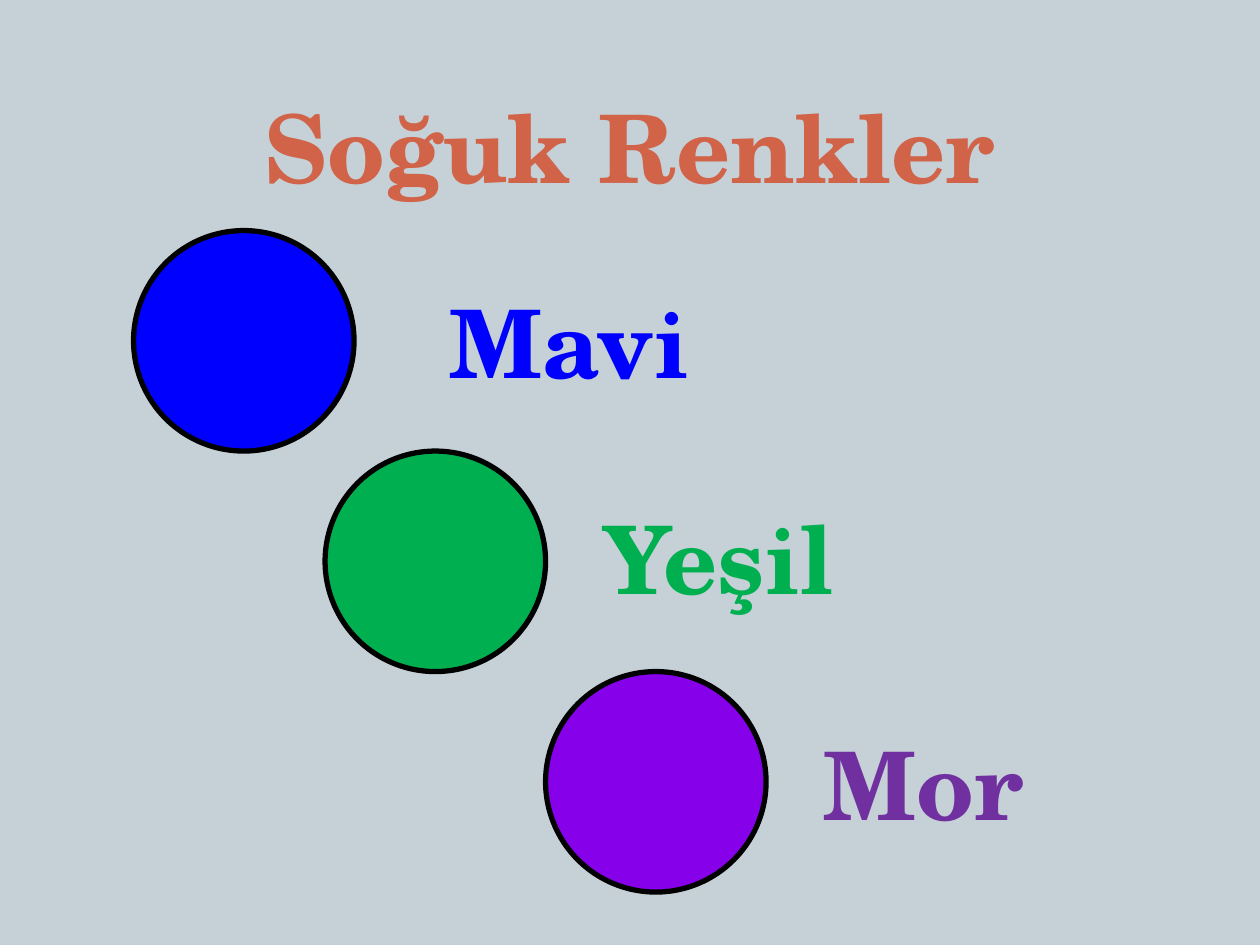
from pptx import Presentation
from pptx.dml.color import RGBColor
from pptx.enum.shapes import MSO_SHAPE
from pptx.enum.text import MSO_ANCHOR, PP_ALIGN
from pptx.util import Inches, Pt

OVAL = MSO_SHAPE.OVAL
BOTTOM, MIDDLE = MSO_ANCHOR.BOTTOM, MSO_ANCHOR.MIDDLE
LEFT, CENTER = PP_ALIGN.LEFT, PP_ALIGN.CENTER

FONT = "TeX Gyre Schola"
DIAMETER = 1.75
FIRST_TOP = 1.83
COLOR_ROWS = [
    ("Mavi", 1.06, "0000FF", "0000FF", (1.97, 0.5, 2.98, 0.75), CENTER),
    ("Yeşil", 2.58, "00B050", "00B050", (2.11, 0.45, 3.21, 0.77), LEFT),
    ("Mor", 4.33, "8600EA", "7030A0", (2.11, 0.52, 1.89, 0.72), LEFT),
]


def color(hex_value):
    return RGBColor.from_string(hex_value)


def add_label(slide, box, text, hex_value, alignment, anchor):
    shape = slide.shapes.add_textbox(*(Inches(length) for length in box))
    text_frame = shape.text_frame
    text_frame.word_wrap = True
    text_frame.vertical_anchor = anchor
    text_frame.text = text
    paragraph = text_frame.paragraphs[0]
    paragraph.alignment = alignment
    font = paragraph.runs[0].font
    font.name = FONT
    font.size = Pt(54)
    font.bold = True
    font.color.rgb = color(hex_value)


def add_circle(slide, left, top, hex_value):
    shape = slide.shapes.add_shape(
        OVAL, Inches(left), Inches(top), Inches(DIAMETER), Inches(DIAMETER)
    )
    shape.shadow.inherit = False
    shape.fill.solid()
    shape.fill.fore_color.rgb = color(hex_value)
    shape.line.color.rgb = color("000000")
    shape.line.width = Pt(3)


def add_color_row(slide, left, top, row):
    name, _, fill, text_color, label_box, alignment = row
    add_circle(slide, left, top, fill)
    offset_x, offset_y, width, height = label_box
    box = (left + offset_x, top + offset_y, width, height)
    add_label(slide, box, name, text_color, alignment, MIDDLE)


def main():
    presentation = Presentation()
    presentation.slide_width = Inches(10)
    presentation.slide_height = Inches(7.5)
    slide = presentation.slides.add_slide(presentation.slide_layouts[6])
    slide.background.fill.solid()
    slide.background.fill.fore_color.rgb = color("C5D1D7")

    title_box = (0.75, -0.07, 8.5, 1.73)
    add_label(slide, title_box, "Soğuk Renkler", "D16349", CENTER, BOTTOM)
    for index, row in enumerate(COLOR_ROWS):
        add_color_row(slide, row[1], FIRST_TOP + index * DIAMETER, row)

    presentation.save("out.pptx")


if __name__ == "__main__":
    main()
